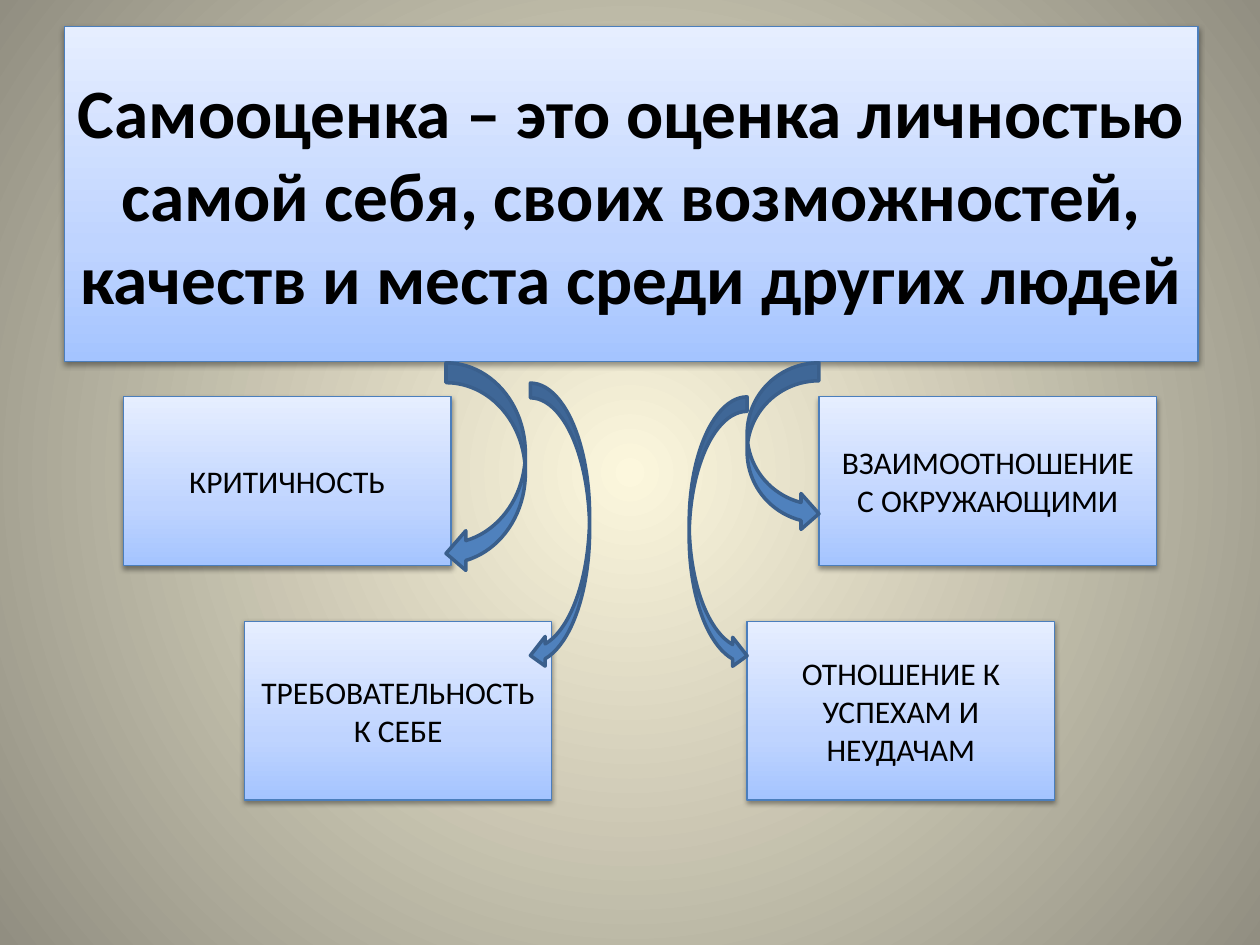
import pptx
import pptx.dml.color
import pptx.enum.shapes
import pptx.enum.text
import pptx.oxml
import pptx.oxml.ns
import pptx.util

RGBColor = pptx.dml.color.RGBColor
Inches = pptx.util.Inches
Pt = pptx.util.Pt
Shape = pptx.enum.shapes.MSO_SHAPE
qn = pptx.oxml.ns.qn
NS = pptx.oxml.ns.nsdecls("a")

BLACK = RGBColor(0x00, 0x00, 0x00)
CREAM = RGBColor(0xFC, 0xF7, 0xDD)
STONE = RGBColor(0x91, 0x8E, 0x81)
SKY = RGBColor(0xA4, 0xC4, 0xFF)
PALE_SKY = RGBColor(0xBF, 0xD4, 0xFF)
ICE = RGBColor(0xE6, 0xEE, 0xFF)
BOX_EDGE = RGBColor(0x4B, 0x7E, 0xBC)
ARROW_BLUE = RGBColor(0x4F, 0x81, 0xBD)
ARROW_EDGE = RGBColor(0x3A, 0x5F, 0x8C)

BACKDROP_STOPS = [(0, CREAM), (100, STONE)]
BOX_STOPS = [(0, SKY), (35, PALE_SKY), (100, ICE)]
RADIAL = (
    f'<a:path {NS} path="circle">'
    '<a:fillToRect l="50000" t="50000" r="50000" b="50000"/></a:path>'
)
UPWARD = f'<a:lin {NS} ang="16200000" scaled="1"/>'
SOFT_SHADOW = (
    f'<a:outerShdw {NS} blurRad="{Pt(3.1)}" dist="{Pt(1.6)}" dir="5400000" '
    'rotWithShape="0"><a:srgbClr val="000000"><a:alpha val="38000"/>'
    "</a:srgbClr></a:outerShdw>"
)


class SlideBuilder:
    def __init__(self, slide, font="Calibri"):
        self.slide = slide
        self.font = font

    def gradient(self, fill, owner, stops, direction):
        fill.gradient()
        gradient = owner.find(".//" + qn("a:gradFill"))
        for child in list(gradient):
            gradient.remove(child)
        marks = "".join(
            f'<a:gs pos="{pos * 1000}"><a:srgbClr val="{color}"/></a:gs>'
            for pos, color in stops
        )
        gradient.append(pptx.oxml.parse_xml(f"<a:gsLst {NS}>{marks}</a:gsLst>"))
        gradient.append(pptx.oxml.parse_xml(direction))

    def backdrop(self):
        self.gradient(
            self.slide.background.fill, self.slide.element, BACKDROP_STOPS, RADIAL
        )

    def outlined(self, kind, bounds, edge, width):
        shape = self.slide.shapes.add_shape(kind, *map(Inches, bounds))
        shape.shadow.inherit = False
        shape.line.color.rgb = edge
        shape.line.width = Pt(width)
        return shape

    def box(self, words, bounds, size=18, bold=False, margin=0.1):
        box = self.outlined(Shape.RECTANGLE, bounds, BOX_EDGE, 0.75)
        self.gradient(box.fill, box.element, BOX_STOPS, UPWARD)
        box.element.find(".//" + qn("a:effectLst")).append(
            pptx.oxml.parse_xml(SOFT_SHADOW)
        )
        frame = box.text_frame
        frame_format = {
            "word_wrap": True,
            "vertical_anchor": pptx.enum.text.MSO_ANCHOR.MIDDLE,
            "margin_left": Inches(margin),
            "margin_right": Inches(margin),
        }
        for name, value in frame_format.items():
            setattr(frame, name, value)
        line = frame.paragraphs[0]
        line.alignment = pptx.enum.text.PP_ALIGN.CENTER
        run = line.add_run()
        run.text = words
        font_format = {"name": self.font, "size": Pt(size), "bold": bold}
        for name, value in font_format.items():
            setattr(run.font, name, value)
        run.font.color.rgb = BLACK

    def arrow(self, kind, bounds):
        arrow = self.outlined(kind, bounds, ARROW_EDGE, 2)
        arrow.fill.solid()
        arrow.fill.fore_color.rgb = ARROW_BLUE


def main():
    deck = pptx.Presentation()
    deck.slide_width = Inches(10)
    deck.slide_height = Inches(7.5)
    builder = SlideBuilder(deck.slides.add_slide(deck.slide_layouts[6]))
    builder.backdrop()

    definition = (
        "Самооценка – это оценка личностью самой себя, своих возможностей, "
        "качеств и места среди других людей"
    )
    builder.box(definition, (0.51, 0.21, 9, 2.66), size=39.6, bold=True, margin=0.05)

    upper_row, lower_row = (3.15, 1.34), (4.93, 1.42)
    aspects = [
        ("КРИТИЧНОСТЬ", 0.98, 2.6, upper_row),
        ("ТРЕБОВАТЕЛЬНОСТЬ К СЕБЕ", 1.94, 2.44, lower_row),
        ("ВЗАИМООТНОШЕНИЕ С ОКРУЖАЮЩИМИ", 6.5, 2.68, upper_row),
        ("ОТНОШЕНИЕ К УСПЕХАМ И НЕУДАЧАМ", 5.93, 2.44, lower_row),
    ]
    for words, left, width, (top, height) in aspects:
        builder.box(words, (left, top, width, height))

    arrows = [
        (Shape.CURVED_LEFT_ARROW, (3.54, 2.88, 0.63, 1.67)),
        (Shape.CURVED_RIGHT_ARROW, (5.93, 2.88, 0.57, 1.34)),
        (Shape.CURVED_LEFT_ARROW, (4.21, 3.04, 0.47, 2.28)),
        (Shape.CURVED_RIGHT_ARROW, (5.47, 3.15, 0.46, 2.17)),
    ]
    for kind, bounds in arrows:
        builder.arrow(kind, bounds)

    deck.save("out.pptx")


if __name__ == "__main__":
    main()
